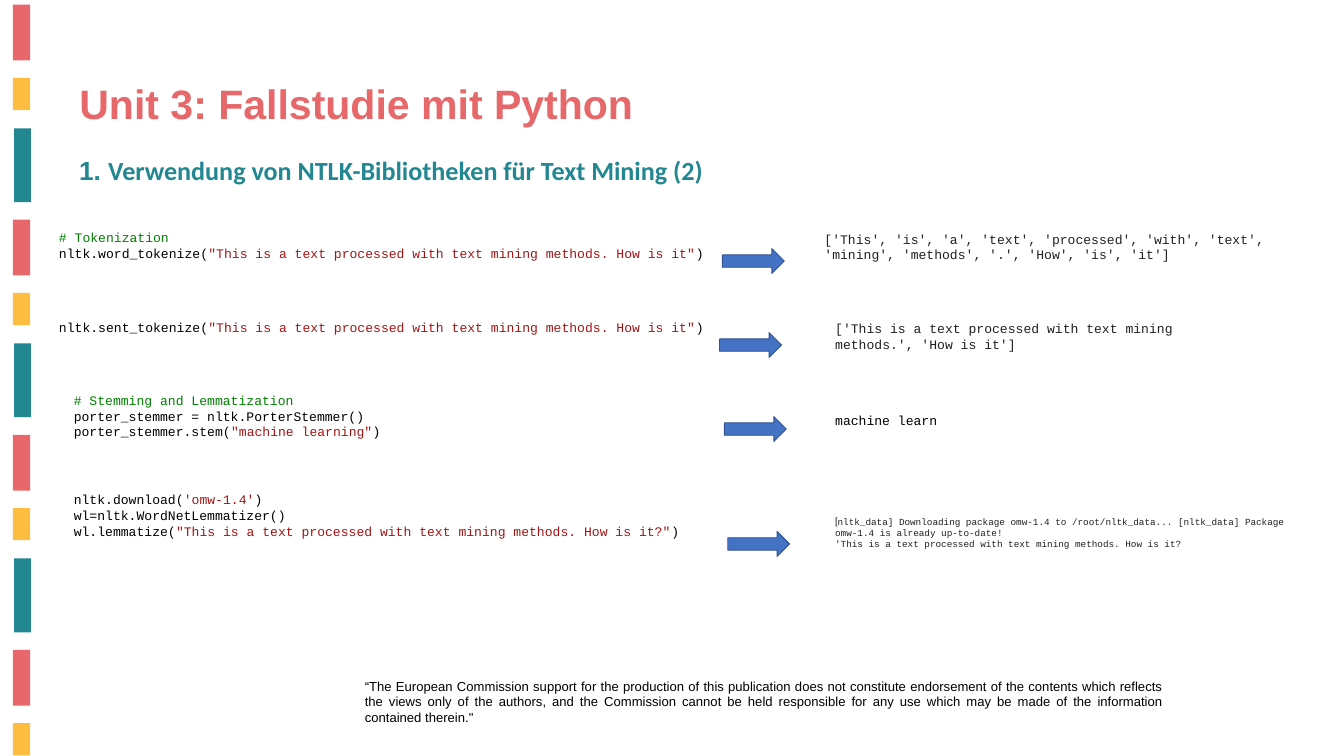
from dataclasses import dataclass

from pptx import Presentation
from pptx.dml.color import RGBColor
from pptx.enum.shapes import MSO_SHAPE
from pptx.enum.text import MSO_ANCHOR, MSO_AUTO_SIZE, PP_ALIGN
from pptx.util import Inches, Pt

RECTANGLE = MSO_SHAPE.RECTANGLE
RIGHT_ARROW = MSO_SHAPE.RIGHT_ARROW
TOP, MIDDLE = MSO_ANCHOR.TOP, MSO_ANCHOR.MIDDLE
LEFT, JUSTIFY = PP_ALIGN.LEFT, PP_ALIGN.JUSTIFY
NO_AUTOFIT = MSO_AUTO_SIZE.NONE


@dataclass(frozen=True)
class Theme:
    red: str = "E8676A"
    title: str = "E7686A"
    yellow: str = "FDBD40"
    teal: str = "238791"
    white: str = "FFFFFF"
    black: str = "000000"
    output: str = "212121"
    comment: str = "008000"
    string: str = "A31515"
    arrow: str = "4472C4"
    arrow_line: str = "31538F"
    sans: str = "Arial"
    heading: str = "Calibri"
    mono: str = "Courier New"
    bracket: str = "Roboto"
    title_size: int = 44
    heading_size: int = 28
    body_size: int = 14
    small_size: int = 10


theme = Theme()


def write(frame, lines, size, bold=False, align=LEFT):
    frame.word_wrap = True
    frame.auto_size = NO_AUTOFIT
    for index, spans in enumerate(lines):
        para = frame.paragraphs[0] if index == 0 else frame.add_paragraph()
        para.alignment = align
        for text, color, font in spans:
            span = para.add_run()
            span.text = text
            span.font.name = font
            span.font.size = Pt(size)
            span.font.bold = bold
            span.font.color.rgb = RGBColor.from_string(color)


def add_block(kind, left, top, width, height, fill, line=None):
    block = page.shapes.add_shape(kind, Inches(left), Inches(top), Inches(width), Inches(height))
    block.shadow.inherit = False
    block.fill.solid()
    block.fill.fore_color.rgb = RGBColor.from_string(fill)
    if line:
        block.line.color.rgb = RGBColor.from_string(line)
        block.line.width = Pt(1)
    else:
        block.line.fill.background()
    return block


deck = Presentation()
deck.slide_width = Inches(20)
deck.slide_height = Inches(11.25)
page = deck.slides.add_slide(deck.slide_layouts[5])

bar_pitch = 3.2
bars = [
    (0.19, 0.07, 0.26, 0.83, theme.red, 4),
    (0.19, 1.16, 0.26, 0.48, theme.yellow, 4),
    (0.21, 1.91, 0.25, 1.1, theme.teal, 3),
]
for left, top, width, height, color, count in bars:
    for step in range(count):
        add_block(RECTANGLE, left, top + step * bar_pitch, width, height, color)

title = page.shapes.title
title.left, title.top = Inches(1.08), Inches(1.12)
title.width, title.height = Inches(10.08), Inches(0.84)
title.text_frame.vertical_anchor = TOP
write(title.text_frame, [[("Unit 3: Fallstudie mit Python", theme.title, theme.sans)]],
      theme.title_size, bold=True)

heading = page.shapes.add_textbox(Inches(1.08), Inches(2.25), Inches(15.58), Inches(0.57))
write(heading.text_frame, [[
    ("1. ", theme.teal, theme.sans),
    ("Verwendung von NTLK-Bibliotheken für Text Mining (2)", theme.teal, theme.heading),
]], theme.heading_size, bold=True)

sentence = "This is a text processed with text mining methods. How is it"
code, string, comment, output = theme.black, theme.string, theme.comment, theme.output
listings = [
    (0.78, 3.37, 10, 1.01, [
        [("# Tokenization", comment)],
        [("nltk.word_tokenize(", code), (f'"{sentence}"', string), (")", code)],
    ]),
    (0.78, 4.71, 10, 0.71, [
        [("nltk.sent_tokenize(", code), (f'"{sentence}"', string), (")", code)],
    ]),
    (1, 5.79, 10, 1.01, [
        [("# Stemming and Lemmatization", comment)],
        [("porter_stemmer = nltk.PorterStemmer()", code)],
        [("porter_stemmer.stem(", code), ('"machine learning"', string), (")", code)],
    ]),
    (1, 7.27, 10, 1.31, [
        [("nltk.download(", code), ("'omw-1.4'", string), (")", code)],
        [("wl=nltk.WordNetLemmatizer()", code)],
        [("wl.lemmatize(", code), (f'"{sentence}?"', string), (")", code)],
    ]),
    (12.17, 3.39, 7.58, 1.01, [
        [("['This', 'is', 'a', 'text', 'processed', 'with', 'text', 'mining', "
          "'methods', '.', 'How', 'is', 'it']", output)],
    ]),
    (12.33, 4.72, 6.22, 0.71, [
        [("['This is a text processed with text mining methods.', 'How is it']", output)],
    ]),
    (12.33, 6.09, 2.16, 0.4, [[("machine learn", code)]]),
]
for left, top, width, height, lines in listings:
    box = page.shapes.add_textbox(Inches(left), Inches(top), Inches(width), Inches(height))
    write(box.text_frame, [[(text, color, theme.mono) for text, color in spans] for spans in lines],
          theme.body_size)

for left, top in [(10.75, 3.7), (10.71, 4.95), (10.78, 6.2), (10.83, 7.91)]:
    add_block(RIGHT_ARROW, left, top, 0.92, 0.37, theme.arrow, theme.arrow_line)

download_log = add_block(RECTANGLE, 12.33, 7.68, 7.25, 0.5, theme.white)
log_frame = download_log.text_frame
log_frame.vertical_anchor = MIDDLE
log_frame.margin_top = log_frame.margin_bottom = 0
write(log_frame, [
    [("[", output, theme.bracket),
     ("nltk_data] Downloading package omw-1.4 to /root/nltk_data... "
      "[nltk_data] Package omw-1.4 is already up-to-date!", output, theme.mono)],
    [(f"'{sentence}?", output, theme.mono)],
], theme.small_size)

disclaimer = page.shapes.add_textbox(Inches(5.33), Inches(10.04), Inches(12.08), Inches(0.81))
write(disclaimer.text_frame, [[(
    "“The European Commission support for the production of this publication does not "
    "constitute endorsement of the contents which reflects the views only of the authors, "
    "and the Commission cannot be held responsible for any use which may be made of the "
    'information contained therein."', theme.black, theme.sans)]],
    theme.body_size, align=JUSTIFY)

deck.save("out.pptx")
